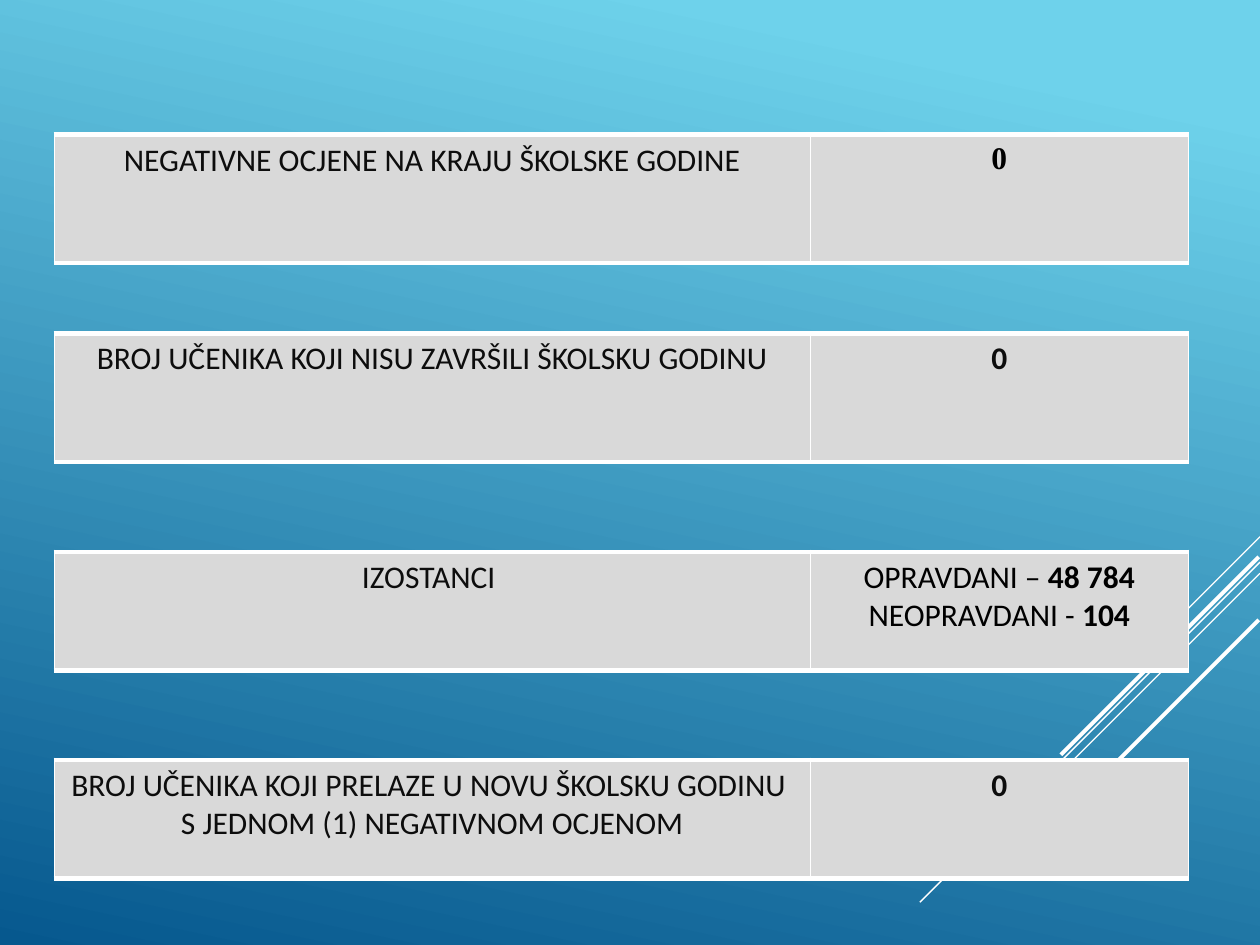
from dataclasses import dataclass

from lxml.etree import SubElement as Sub
from pptx import Presentation
from pptx.dml.color import RGBColor as Rgb
from pptx.enum.shapes import MSO_CONNECTOR as Conn
from pptx.enum.text import PP_ALIGN as Align
from pptx.oxml.ns import qn
from pptx.util import Pt


@dataclass(frozen=True)
class Theme:
    sky: str = "6ED2EB"
    deep: str = "06588E"
    white: str = "FFFFFF"
    cell: str = "D9D9D9"
    ink: str = "0D0D0D"
    black: str = "000000"
    font: str = "Calibri"
    serif: str = "Times New Roman"
    size: float = 18
    thin: float = 0.96
    thick: float = 3


def apply(target, values):
    for name, value in values.items():
        setattr(target, name, value)


class Deck:
    def __init__(self, theme):
        self.theme = theme
        self.prs = Presentation()
        apply(self.prs, {"slide_width": Pt(720), "slide_height": Pt(540)})
        self.slide = self.prs.slides.add_slide(self.prs.slide_layouts[6])

    def back(self):
        fill = self.slide.background.fill
        fill.gradient()
        fill.gradient_angle = 258
        stops = ((0.1, self.theme.sky), (1, self.theme.deep))
        for stop, (place, tone) in zip(fill.gradient_stops, stops):
            stop.position = place
            stop.color.rgb = Rgb.from_string(tone)

    def line(self, x, y, end, width):
        """Draw a 45 degree line from (x, y) down and left to x = end."""
        pts = [Pt(n) for n in (x, y, end, y + x - end)]
        item = self.slide.shapes.add_connector(Conn.STRAIGHT, *pts)
        item.line.width = Pt(width)
        item.line.color.rgb = Rgb.from_string(self.theme.white)
        Sub(item._element.spPr, qn("a:effectLst"))

    def edge(self, cell):
        props = cell._tc.get_or_add_tcPr()
        look = self.theme
        sides = {"L": look.thin, "R": look.thin, "T": look.thick, "B": look.thick}
        for side, width in sides.items():
            rule = Sub(props, qn(f"a:ln{side}"), w=str(Pt(width)))
            Sub(Sub(rule, qn("a:solidFill")), qn("a:srgbClr"), val=look.white)

    def cell(self, cell, paras, tone, font):
        """Fill a cell; paras is a list of lists of (text, bold) runs."""
        self.edge(cell)
        cell.fill.solid()
        cell.fill.fore_color.rgb = Rgb.from_string(self.theme.cell)
        apply(cell, {"margin_left": Pt(5), "margin_right": Pt(5),
                     "margin_top": Pt(3.6), "margin_bottom": Pt(3.6)})
        frame = cell.text_frame
        for i, runs in enumerate(paras):
            para = frame.add_paragraph() if i else frame.paragraphs[0]
            para.alignment = Align.CENTER
            for text, bold in runs:
                run = para.add_run()
                run.text = text
                apply(run.font, {"name": font, "size": Pt(self.theme.size),
                                 "bold": bold})
                run.font.color.rgb = Rgb.from_string(tone)

    def table(self, top, high, label, value, tone, font):
        box = [Pt(n) for n in (31, top, 648, high)]
        grid = self.slide.shapes.add_table(1, 2, *box).table
        apply(grid, {"first_row": False, "horz_banding": False})
        for col, width in zip(grid.columns, (432, 216)):
            col.width = Pt(width)
        names = [[(text, False)] for text in label]
        self.cell(grid.cell(0, 0), names, self.theme.ink, self.theme.font)
        self.cell(grid.cell(0, 1), value, tone, font)


def main():
    look = Theme()
    deck = Deck(look)
    deck.back()

    for line in (
        (720, 306.7, 660.2, 0.75),
        (720, 321.2, 525.6, 0.75),
        (720, 327.6, 596.2, 0.75),
        (719.3, 318.2, 606.2, 2.25),
        (719.3, 354.2, 637.2, 2.25),
    ):
        deck.line(*line)

    zero = [[("0", True)]]
    missed = [[("OPRAVDANI – ", False), ("48 784", True)],
              [("NEOPRAVDANI - ", False), ("104", True)]]
    for row in (
        (77, 73.4, ["NEGATIVNE OCJENE NA KRAJU ŠKOLSKE GODINE"],
         zero, look.black, look.serif),
        (190.6, 73.4, ["BROJ UČENIKA KOJI NISU ZAVRŠILI ŠKOLSKU GODINU"],
         zero, look.ink, look.font),
        (315.4, 67.7, ["IZOSTANCI "], missed, look.black, look.font),
        (434.3, 67.7, ["BROJ UČENIKA KOJI PRELAZE U NOVU ŠKOLSKU GODINU ",
                       "S JEDNOM (1) NEGATIVNOM OCJENOM"],
         zero, look.ink, look.font),
    ):
        deck.table(*row)

    deck.prs.save("out.pptx")


if __name__ == "__main__":
    main()
